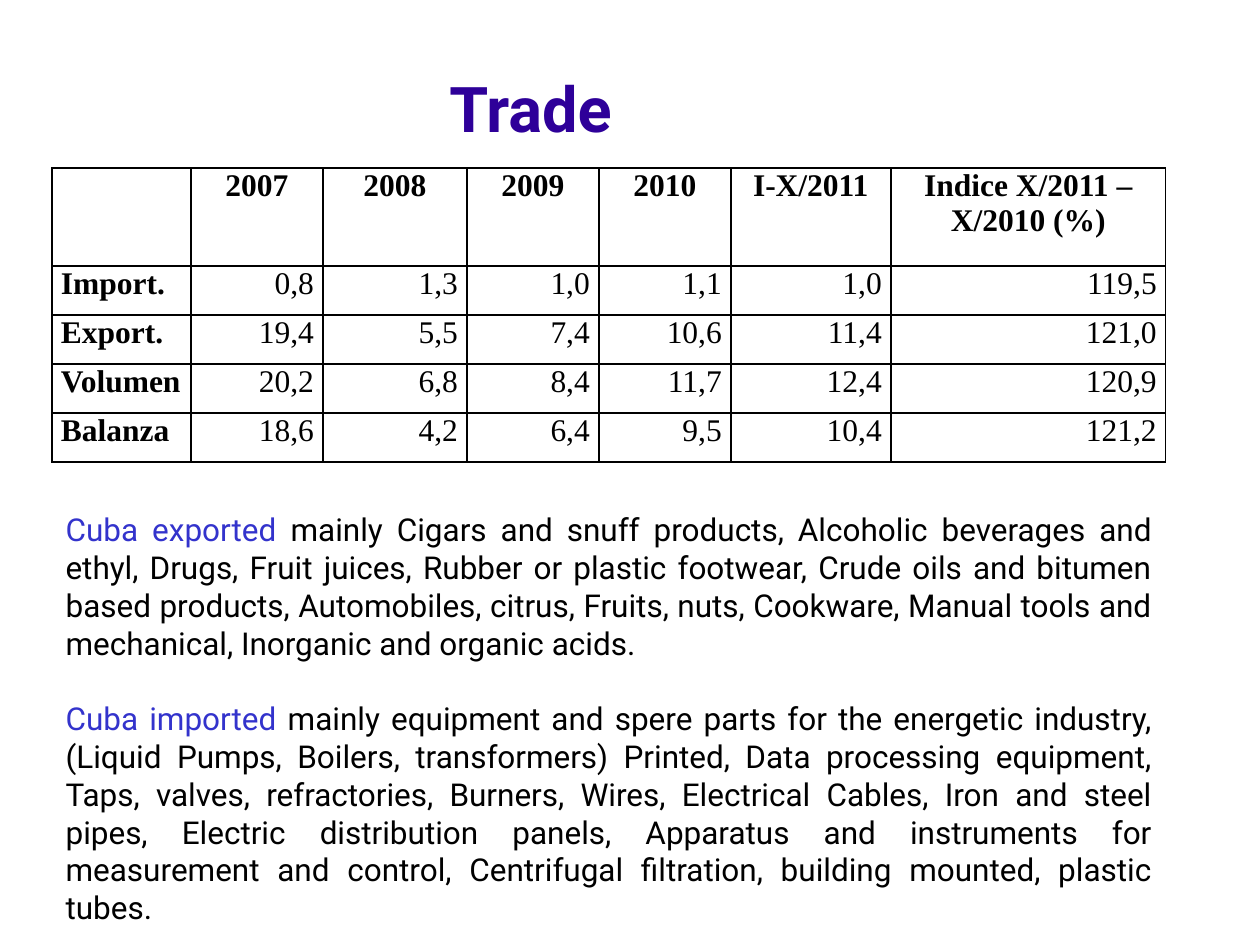
from lxml import etree
from pptx import Presentation
from pptx.dml.color import RGBColor
from pptx.enum.text import MSO_ANCHOR, MSO_AUTO_SIZE, PP_ALIGN
from pptx.oxml.ns import qn
from pptx.util import Emu, Pt

LEFT, MID, RIGHT, JUST = (PP_ALIGN.LEFT, PP_ALIGN.CENTER,
                          PP_ALIGN.RIGHT, PP_ALIGN.JUSTIFY)
TOP, FIXED = MSO_ANCHOR.TOP, MSO_AUTO_SIZE.NONE

BLACK = RGBColor(0x00, 0x00, 0x00)
BLUE = RGBColor(0x33, 0x33, 0xCC)
VIOLET = RGBColor(0x2E, 0x00, 0x99)

HEAD = ["", "2007", "2008", "2009", "2010", "I-X/2011",
        "Indice X/2011 – X/2010 (%)"]
ROWS = [
    ["Import.", "0,8", "1,3", "1,0", "1,1", "1,0", "119,5"],
    ["Export.", "19,4", "5,5", "7,4", "10,6", "11,4", "121,0"],
    ["Volumen", "20,2", "6,8", "8,4", "11,7", "12,4", "120,9"],
    ["Balanza", "18,6", "4,2", "6,4", "9,5", "10,4", "121,2"],
]
WIDTHS = [139, 132, 144, 132, 132, 160, 275]
HEIGHTS = [98, 49, 49, 49, 49]

NOTES = [
    ("Cuba exported ",
     "mainly Cigars and snuff products, Alcoholic beverages and ethyl, Drugs, "
     "Fruit juices, Rubber or plastic footwear, Crude oils and bitumen based "
     "products, Automobiles, citrus, Fruits, nuts, Cookware, Manual tools and "
     "mechanical, Inorganic and organic acids."),
    ("Cuba imported ",
     "mainly equipment and spere parts for the energetic industry, (Liquid "
     "Pumps, Boilers, transformers) Printed, Data processing equipment, Taps, "
     "valves, refractories, Burners, Wires, Electrical Cables, Iron and steel "
     "pipes, Electric distribution panels, Apparatus and instruments for "
     "measurement and control, Centrifugal filtration, building mounted, "
     "plastic tubes."),
]


def px(n):
    return Emu(round(n * 914400 / 126))


def put(obj, vals):
    for key, val in vals.items():
        setattr(obj, key, val)


class Deck:
    sans, serif = "Roboto", "Times New Roman"

    def __init__(self):
        self.prs = Presentation()
        put(self.prs, {"slide_width": px(1260), "slide_height": px(945)})
        self.slide = self.prs.slides.add_slide(self.prs.slide_layouts[1])

    def add_text(self, para, text, size, color, face, bold=False):
        run = para.add_run()
        run.text = text
        put(run.font, {"size": Pt(size), "name": face, "bold": bold})
        run.font.color.rgb = color

    def place(self, shape, x, y, w, h):
        put(shape, {"left": px(x), "top": px(y),
                    "width": px(w), "height": px(h)})
        frame = shape.text_frame
        put(frame, {"word_wrap": True, "auto_size": FIXED,
                    "vertical_anchor": TOP})
        return frame

    def title(self, text, *box):
        para = self.place(self.slide.shapes.title, *box).paragraphs[0]
        para.alignment = MID
        self.add_text(para, text, 36, VIOLET, self.sans, True)

    def body(self, notes, *box):
        frame = self.place(self.slide.placeholders[1], *box)
        for i, (lead, rest) in enumerate(notes):
            para = frame.add_paragraph() if i else frame.paragraphs[0]
            prop = para._p.get_or_add_pPr()
            prop.set("marL", "0")
            prop.set("indent", "0")
            etree.SubElement(prop, qn("a:buNone"))
            put(para, {"alignment": JUST,
                       "space_before": Pt(21.5 if i else 0)})
            self.add_text(para, lead, 18, BLUE, self.sans)
            self.add_text(para, rest, 18, BLACK, self.sans)

    def border(self, cell):
        cell.fill.background()
        prop = cell._tc.get_or_add_tcPr()
        for i, side in enumerate("LRTB"):
            line = etree.Element(qn("a:ln" + side), w=str(Pt(1)))
            fill = etree.SubElement(line, qn("a:solidFill"))
            etree.SubElement(fill, qn("a:srgbClr"), val=str(BLACK))
            prop.insert(i, line)

    def table(self, rows, widths, heights, x, y):
        grid = self.slide.shapes.add_table(
            len(rows), len(widths), px(x), px(y),
            px(sum(widths)), px(sum(heights))).table
        put(grid, {"first_row": False, "horz_banding": False})
        for col, wide in zip(grid.columns, widths):
            col.width = px(wide)
        for r, (row, high) in enumerate(zip(rows, heights)):
            grid.rows[r].height = px(high)
            for c, text in enumerate(row):
                cell = grid.cell(r, c)
                put(cell, {"margin_left": px(9), "margin_right": px(9),
                           "margin_top": 0, "margin_bottom": 0,
                           "vertical_anchor": TOP})
                self.border(cell)
                para = cell.text_frame.paragraphs[0]
                para.alignment = MID if r == 0 else RIGHT if c else LEFT
                if text:
                    self.add_text(para, text, 18, BLACK, self.serif,
                                  r == 0 or c == 0)


def main():
    deck = Deck()
    # Heading
    deck.title("Trade", 53, 63, 955, 90)
    # Trade figures
    deck.table([HEAD] + ROWS, WIDTHS, HEIGHTS, 52, 168)
    # Goods sold and bought
    deck.body(NOTES, 53, 504, 1112, 432)
    deck.prs.save("out.pptx")


if __name__ == "__main__":
    main()
